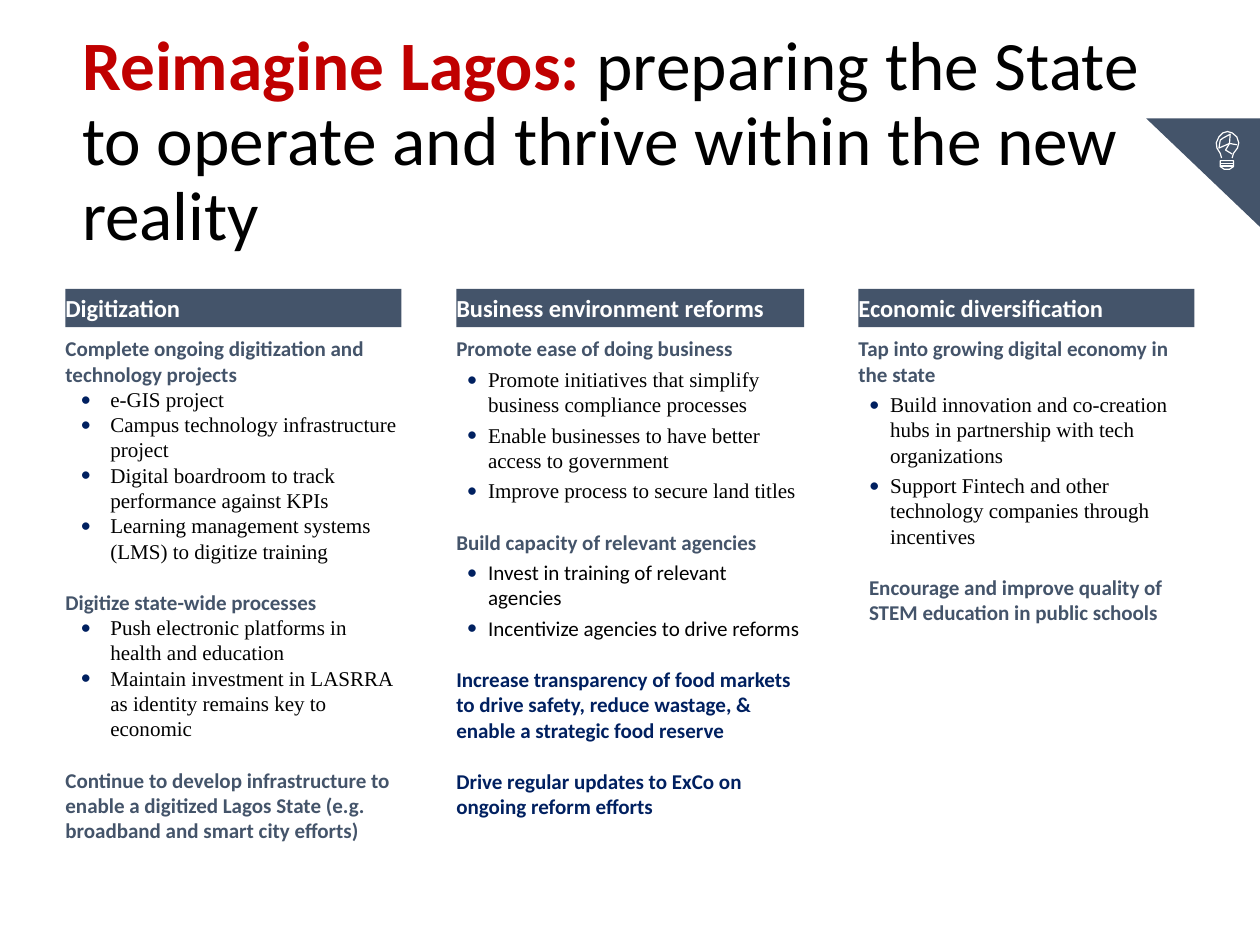
from lxml.etree import SubElement
from pptx import Presentation
from pptx.dml.color import RGBColor
from pptx.enum.shapes import MSO_SHAPE
from pptx.enum.text import MSO_ANCHOR, MSO_AUTO_SIZE, PP_ALIGN
from pptx.oxml.ns import qn
from pptx.util import Cm, Pt

COLORS = {"slate": "44546A", "navy": "002060", "red": "C00000",
          "black": "000000", "white": "FFFFFF"}

# Font values for each kind of text
FORMATS = {
    "title_lead": {"name": "Calibri", "size": Pt(29.7), "bold": True, "color": "red"},
    "title_rest": {"name": "Calibri", "size": Pt(29.7), "bold": False, "color": "black"},
    "header": {"name": "Calibri", "size": Pt(10.5), "bold": True, "color": "white"},
    "goal": {"name": "Calibri", "size": Pt(9), "bold": True, "color": "slate"},
    "navy_goal": {"name": "Calibri", "size": Pt(9), "bold": True, "color": "navy"},
    "action": {"name": "Times New Roman", "size": Pt(9), "bold": False, "color": "black"},
    "plain_action": {"name": "Calibri", "size": Pt(9), "bold": False, "color": "black"},
}
LINE_GAP, GOAL_GAP = 2.2, 11.2

# Each column: header, left, width, bullet indent, bullet hang, action gap, lines
COLUMNS = [
    ("Digitization", 0.99, 5.08, 0.68, 0.45, 0, [
        ("goal", "Complete ongoing digitization and technology projects"),
        ("action", "e-GIS project"),
        ("action", "Campus technology infrastructure project"),
        ("action", "Digital boardroom to track performance against KPIs"),
        ("action", "Learning management systems (LMS) to digitize training"),
        ("goal", "Digitize state-wide processes"),
        ("action", "Push electronic platforms in health and education"),
        ("action", "Maintain investment in LASRRA as identity remains key to economic"),
        ("goal", "Continue to develop infrastructure to enable a digitized Lagos State "
                 "(e.g. broadband and smart city efforts)"),
    ]),
    ("Business environment reforms", 6.9, 5.26, 0.48, 0.32, LINE_GAP, [
        ("goal", "Promote ease of doing business"),
        ("action", "Promote initiatives that simplify business compliance processes"),
        ("action", "Enable businesses to have better access to government"),
        ("action", "Improve process to secure land titles"),
        ("goal", "Build capacity of relevant agencies"),
        ("plain_action", "Invest in training of relevant agencies"),
        ("plain_action", "Incentivize agencies to drive reforms"),
        ("navy_goal", "Increase transparency of food markets to drive safety, "
                      "reduce wastage, & enable a strategic food reserve"),
        ("navy_goal", "Drive regular updates to ExCo on ongoing reform efforts"),
    ]),
    ("Economic diversification", 12.98, 5.08, 0.48, 0.32, LINE_GAP, [
        ("goal", "Tap into growing digital economy in the state"),
        ("action", "Build innovation and co-creation hubs in partnership with tech organizations"),
        ("action", "Support Fintech and other technology companies through incentives"),
        ("goal", "Encourage and improve quality of STEM education in public schools"),
    ]),
]


def add_run(paragraph, text, kind):
    run = paragraph.add_run()
    run.text = text
    for attribute, value in FORMATS[kind].items():
        if attribute == "color":
            run.font.color.rgb = RGBColor.from_string(COLORS[value])
        else:
            setattr(run.font, attribute, value)


def set_frame(frame, **values):
    margins = dict.fromkeys(
        ("margin_left", "margin_top", "margin_right", "margin_bottom"), 0)
    for attribute, value in {**margins, "word_wrap": True, **values}.items():
        setattr(frame, attribute, value)


presentation = Presentation()
presentation.slide_width, presentation.slide_height = Cm(19.05), Cm(14.29)
slide = presentation.slides.add_slide(presentation.slide_layouts[5])
shapes = slide.shapes

# Title
title = shapes.title
title.left, title.top, title.width, title.height = Cm(0.99), Cm(1.02), Cm(17.09), Cm(2.29)
set_frame(title.text_frame, margin_left=Cm(0.25), margin_right=Cm(0.25),
          vertical_anchor=MSO_ANCHOR.MIDDLE, auto_size=MSO_AUTO_SIZE.NONE)
headline = title.text_frame.paragraphs[0]
headline.alignment, headline.line_spacing = PP_ALIGN.LEFT, 0.9
add_run(headline, "Reimagine Lagos:", "title_lead")
add_run(headline, " preparing the State to operate and thrive within the new reality",
        "title_rest")

# Three columns: header bar with goals and actions below
for header, left, width, indent, hang, action_gap, lines in COLUMNS:
    bar = shapes.add_shape(MSO_SHAPE.RECTANGLE, Cm(left), Cm(4.37), Cm(width), Cm(0.58))
    bar.shadow.inherit = False
    bar.fill.solid()
    bar.fill.fore_color.rgb = RGBColor.from_string(COLORS["slate"])
    bar.line.fill.background()
    set_frame(bar.text_frame, vertical_anchor=MSO_ANCHOR.MIDDLE)
    bar.text_frame.paragraphs[0].alignment = PP_ALIGN.LEFT
    add_run(bar.text_frame.paragraphs[0], header, "header")

    body = shapes.add_textbox(Cm(left), Cm(5.08), Cm(width), Cm(8)).text_frame
    set_frame(body, auto_size=MSO_AUTO_SIZE.SHAPE_TO_FIT_TEXT)
    for index, (kind, text) in enumerate(lines):
        paragraph = body.paragraphs[0] if index == 0 else body.add_paragraph()
        properties = paragraph._p.get_or_add_pPr()
        if kind.endswith("action"):
            paragraph.level = 1
            paragraph.space_before = Pt(action_gap)
            properties.set("marL", str(Cm(indent)))
            properties.set("indent", str(-Cm(hang)))
            bullet_color = SubElement(properties, qn("a:buClr"))
            SubElement(bullet_color, qn("a:srgbClr"), val=COLORS["navy"])
            SubElement(properties, qn("a:buFont"), typeface="Calibri")
            SubElement(properties, qn("a:buChar"), char="•")
        elif index:
            paragraph.space_before = Pt(GOAL_GAP)
        add_run(paragraph, text, kind)

# The closing goal of the last column is slightly indented
properties.set("marL", str(Cm(0.16)))

# Corner triangle
corner = shapes.add_shape(MSO_SHAPE.ISOSCELES_TRIANGLE, Cm(17.37), Cm(1.75), Cm(1.65), Cm(1.73))
corner.adjustments[0] = 1
corner.rotation = 270
corner.shadow.inherit = False
corner.fill.solid()
corner.fill.fore_color.rgb = RGBColor.from_string(COLORS["slate"])
corner.line.fill.background()

# Light bulb: glass, facets and screw base, in hundredths of a centimetre
bulb_strokes = [
    [(8, 40), (6, 33), (1, 25), (0, 17), (4, 8), (10, 2), (17, 0),
     (24, 2), (31, 8), (34, 17), (32, 25), (26, 33), (24, 40)],
    [(4, 25), (6, 13), (10, 10), (21, 4), (20, 18), (4, 25)],
    [(31, 20), (20, 18), (14, 28), (24, 34)],
    [(6, 44), (26, 44), (26, 53), (20, 57), (12, 57), (6, 53), (6, 44)],
    [(6, 48), (26, 48)],
    [(6, 52), (26, 52)],
]
builder = shapes.build_freeform(*bulb_strokes[0][0], scale=Cm(0.01))
for stroke in bulb_strokes:
    builder.move_to(*stroke[0])
    builder.add_line_segments(stroke[1:], close=False)
bulb = builder.convert_to_shape(Cm(18.39), Cm(1.99))
bulb.shadow.inherit = False
bulb.fill.background()
bulb.line.color.rgb = RGBColor.from_string(COLORS["white"])
bulb.line.width = Pt(0.5)

presentation.save("out.pptx")
